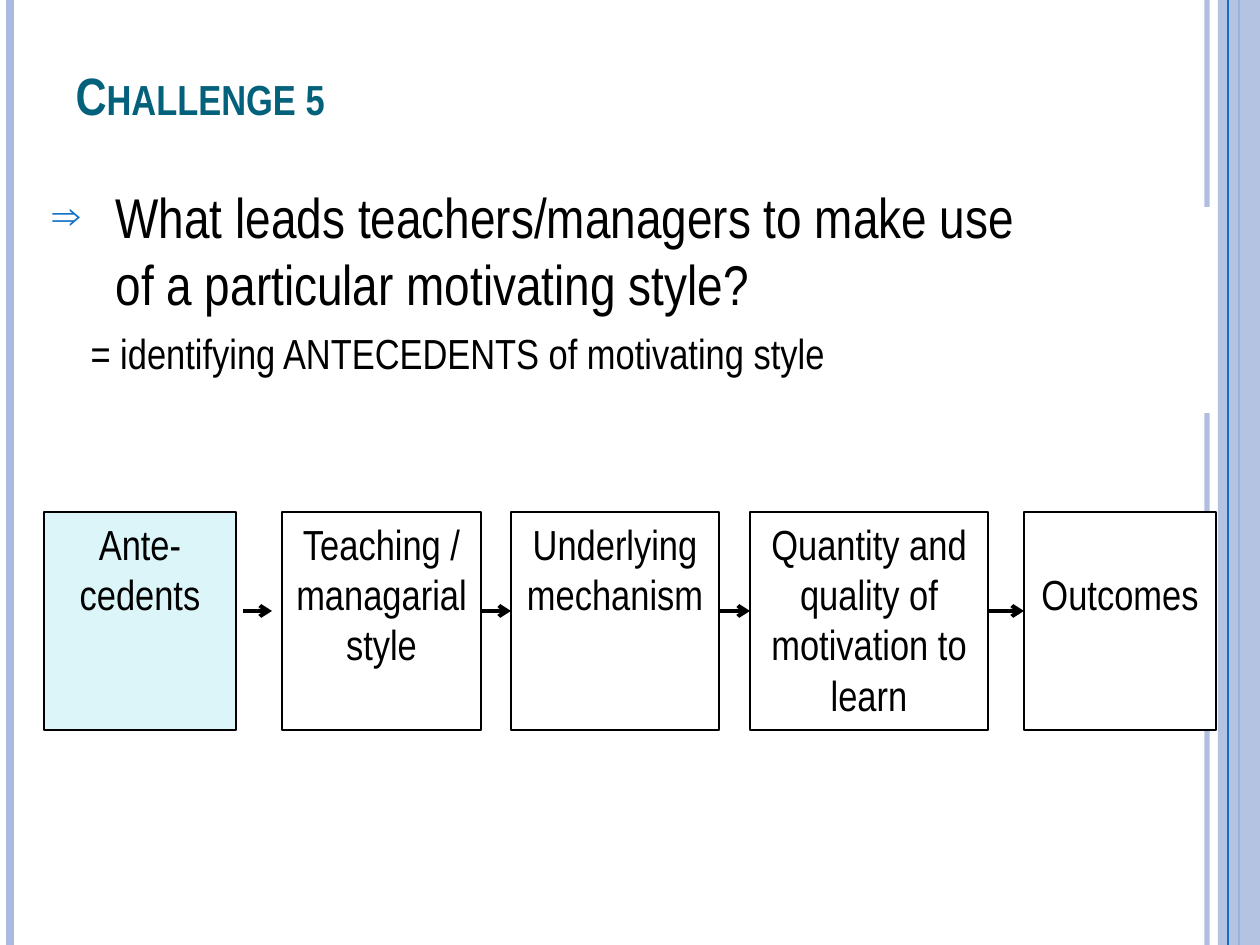
from lxml import etree
from pptx import Presentation
from pptx.dml.color import RGBColor
from pptx.enum.shapes import MSO_CONNECTOR, MSO_SHAPE
from pptx.enum.text import MSO_ANCHOR, MSO_AUTO_SIZE, PP_ALIGN
from pptx.oxml.ns import qn
from pptx.util import Emu, Pt

RECTANGLE = MSO_SHAPE.RECTANGLE
STRAIGHT = MSO_CONNECTOR.STRAIGHT
TOP, BOTTOM = MSO_ANCHOR.TOP, MSO_ANCHOR.BOTTOM
LEFT, CENTER = PP_ALIGN.LEFT, PP_ALIGN.CENTER
NO_FIT = MSO_AUTO_SIZE.NONE

# Content
FONT = "Arial Narrow"
BLACK, WHITE, PALE, BLUE, TEAL, AQUA = (
    "000000", "FFFFFF", "ABBBDF", "0F6FC6", "04617B", "DBF5F9")
TITLE = "Challenge 5"
QUESTION = "What leads teachers/managers to make use of a particular motivating style?"
ANSWER = "= identifying ANTECEDENTS of motivating style"
# text, left, width, fill, top inset
STEPS = [
    ("Ante-cedents", 44, 192, AQUA, 6),
    ("Teaching / managarial style", 282, 199, WHITE, 6),
    ("Underlying mechanism", 511, 208, WHITE, 6),
    ("Quantity and quality of motivation to learn", 750, 238, WHITE, 6),
    ("Outcomes", 1024, 192, WHITE, 56),
]
STEP_TOP, STEP_HEIGHT, ARROW_Y = 512, 218, 611
FIRST_ARROW = (243, 272)
PAGE_WIDTH, PAGE_HEIGHT = 1260, 945


def px(length):
    return Emu(round(length * 914400 / 126))


def color(value):
    return RGBColor.from_string(value)


def add_child(parent, tag, **attributes):
    child = etree.SubElement(parent, qn(tag))
    for name, value in attributes.items():
        child.set(name, value)
    return child


def set_alpha(owner, percent):
    for shade in owner.iter(qn("a:srgbClr")):
        add_child(shade, "a:alpha", val=str(percent * 1000))


def add_box(page, left, top, width, height, fill, outline=None):
    box = page.shapes.add_shape(RECTANGLE, px(left), px(top), px(width), px(height))
    box.shadow.inherit = False
    box.fill.solid()
    box.fill.fore_color.rgb = color(fill)
    if outline:
        box.line.color.rgb = color(outline)
        box.line.width = Pt(0.75)
    else:
        box.line.fill.background()
    return box


def add_line(page, start, end, shade, width, arrow=False):
    line = page.shapes.add_connector(STRAIGHT, *map(px, start + end))
    line.line.color.rgb = color(shade)
    line.line.width = Pt(width)
    if arrow:
        add_child(line.line._get_or_add_ln(), "a:tailEnd", type="arrow")
    add_child(line._element.spPr, "a:effectLst")
    return line


def add_rule(page, x, shade, width):
    return add_line(page, (x, 0), (x, PAGE_HEIGHT), shade, width)


def style(para, size, shade=BLACK, align=LEFT, bold=False):
    para.alignment = align
    para.font.name = FONT
    para.font.size = Pt(size)
    para.font.bold = bold
    para.font.color.rgb = color(shade)


def place(holder, left, top, width, height, anchor):
    holder.left, holder.top, holder.width, holder.height = map(
        px, (left, top, width, height))
    frame = holder.text_frame
    frame.auto_size = NO_FIT
    frame.word_wrap = True
    frame.vertical_anchor = anchor
    tree = holder.element.getparent()
    tree.append(holder.element)  # bring to front
    return frame


def set_indent(para, margin, indent):
    properties = para._p.get_or_add_pPr()
    properties.set("marL", str(px(margin)))
    properties.set("indent", str(px(indent)))
    return properties


deck = Presentation()
deck.slide_width, deck.slide_height = px(PAGE_WIDTH), px(PAGE_HEIGHT)
page = deck.slides.add_slide(deck.slide_layouts[1])

# Side stripes
set_alpha(add_rule(page, 1207, PALE, 3).element, 93)
add_rule(page, 10, PALE, 4.5)
add_rule(page, 1239, BLUE, 1.5)
set_alpha(add_box(page, 1218, 0, 42, PAGE_HEIGHT, PALE).element, 87)
add_rule(page, 1228, BLUE, 0.75)

# White panel behind the question
add_box(page, 39, 207, 1172, 206, WHITE)

# Chain of steps
for text, left, width, fill, inset in STEPS:
    box = add_box(page, left, STEP_TOP, width, STEP_HEIGHT, fill, BLACK)
    frame = box.text_frame
    frame.word_wrap = True
    frame.vertical_anchor = TOP
    frame.margin_top = px(inset)
    frame.text = text
    style(frame.paragraphs[0], 24, align=CENTER)

# Arrows between the steps
gaps = [(left + width, after[1])
        for (_, left, width, *_), after in zip(STEPS[1:], STEPS[2:])]
for start, end in [FIRST_ARROW] + gaps:
    add_line(page, (start, ARROW_Y), (end, ARROW_Y), BLACK, 2.25, arrow=True)

# Title in small capitals
frame = place(page.shapes.title, 63, 38, 1029, 157, BOTTOM)
frame.margin_bottom = px(69)
frame.text = TITLE
heading = frame.paragraphs[0]
style(heading, 30, TEAL, bold=True)
heading._p.pPr.find(qn("a:defRPr")).set("cap", "small")

# Question and answer
frame = place(page.placeholders[1], 40, 176, 1029, 672, TOP)
frame.text = QUESTION
question, answer = frame.paragraphs[0], frame.add_paragraph()
answer.text = ANSWER

bullet = set_indent(question, 63, -63)
add_child(add_child(bullet, "a:buClr"), "a:srgbClr", val=BLUE)
add_child(bullet, "a:buSzPct", val="70000")
add_child(bullet, "a:buChar", char="⇒")
question.space_before = Pt(0)
style(question, 32)

add_child(set_indent(answer, 38, 0), "a:buNone")
answer.space_before = Pt(6)
style(answer, 24)

deck.save("out.pptx")
